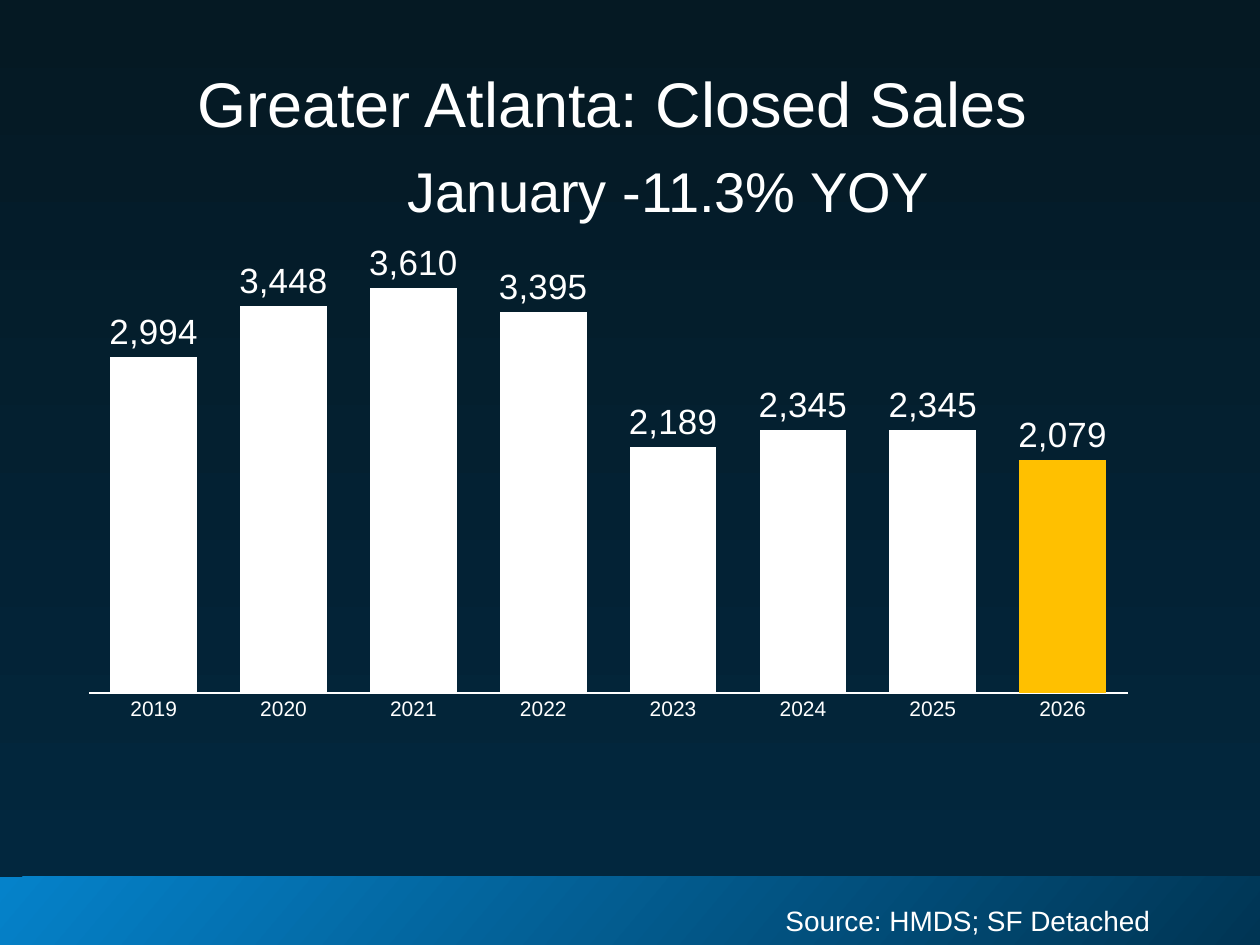
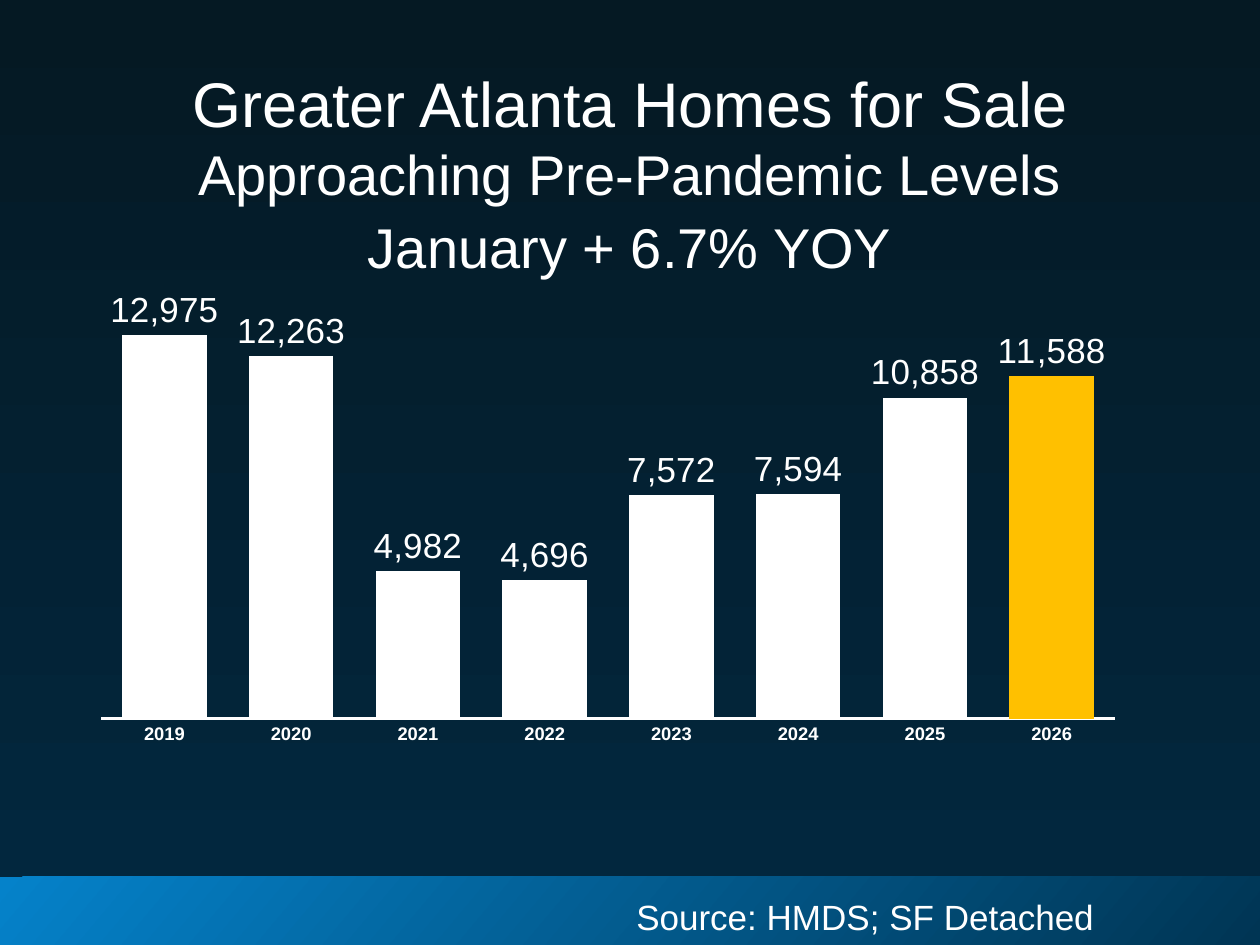
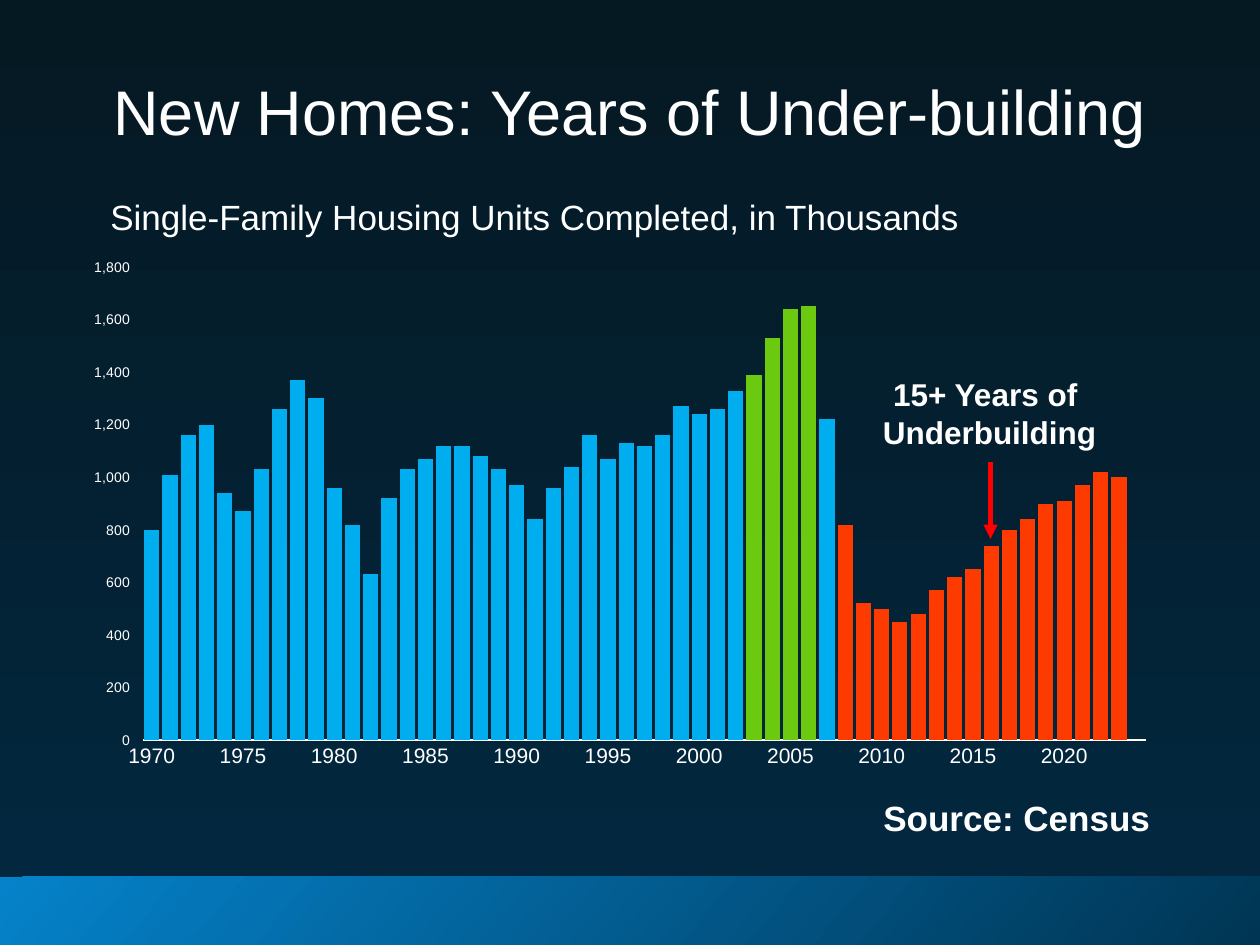
import pptx
import pptx.util
import pptx.chart.data
import pptx.dml.color
import pptx.enum.chart
import pptx.enum.shapes
import pptx.enum.text
import pptx.oxml
import pptx.oxml.ns
import lxml.etree

Pt = pptx.util.Pt
qn = pptx.oxml.ns.qn
Align = pptx.enum.text.PP_ALIGN
ChartType = pptx.enum.chart.XL_CHART_TYPE
TickMark = pptx.enum.chart.XL_TICK_MARK

FONT = "Arial"
COLORS = {
    "night": "051923",
    "navy": "022840",
    "band_start": "0582CA",
    "band_end": "003554",
    "white": "FFFFFF",
    "gold": "FFC000",
    "sky": "00AEEF",
    "green": "6BC910",
    "orange": "FD3A00",
    "red": "FF0000",
}
WIDTH, HEIGHT, BAND_TOP = 720, 540, 501
TITLE_SIZE, SUBTITLE_SIZE = 36, 32
LEADING = 0.12

RECENT_YEARS = [str(year) for year in range(2019, 2027)]
HISTORY_YEARS = [str(year) if year % 5 == 0 else "" for year in range(1970, 2025)]
CLOSED_SALES = [2994, 3448, 3610, 3395, 2189, 2345, 2345, 2079]
HOMES_FOR_SALE = [12975, 12263, 4982, 4696, 7572, 7594, 10858, 11588]
COMPLETED_UNITS = [
    800, 1010, 1160, 1200, 940, 870, 1030, 1260, 1370, 1300,
    960, 820, 630, 920, 1030, 1070, 1120, 1120, 1080, 1030,
    970, 840, 960, 1040, 1160, 1070, 1130, 1120, 1160, 1270,
    1240, 1260, 1330, 1390, 1530, 1640, 1650, 1220, 820, 520,
    500, 450, 480, 570, 620, 650, 740, 800, 840, 900,
    910, 970, 1020, 1000, None,
]
LATEST_YEAR = {7: "gold"}
BOOM_AND_SLUMP = {
    **dict.fromkeys(range(33, 37), "green"),
    **dict.fromkeys(range(38, 54), "orange"),
}

SLIDES = [
    {
        "texts": [
            (["Greater Atlanta: Closed Sales"], (0, 32.4, 700, 42.5),
             {"size": TITLE_SIZE, "leading": LEADING}),
            (["January -11.3% YOY"], (85, 85.7, 594, 24.5),
             {"size": SUBTITLE_SIZE, "leading": LEADING}),
            (["Source: HMDS; SF Detached"], (64, 512.6, 593.3, 20),
             {"size": 16, "align": Align.RIGHT, "inset": 3.6}),
        ],
        "chart": {
            "box": (37.4, 139, 607.7, 302.4), "plot": (0.022, 0, 0.978, 0.85),
            "categories": RECENT_YEARS, "values": CLOSED_SALES,
            "maximum": 4010, "base": "white", "highlights": LATEST_YEAR,
        },
    },
    {
        "texts": [
            (["Greater Atlanta Homes for Sale", ("Approaching Pre-Pandemic Levels", SUBTITLE_SIZE)],
             (63, 32.4, 594, 42.5), {"size": TITLE_SIZE, "leading": LEADING}),
            (["January + 6.7% YOY"], (63, 117.4, 594, 24.5),
             {"size": SUBTITLE_SIZE, "leading": LEADING}),
            (["Source: HMDS; SF Detached"], (32, 508.3, 593.3, 20),
             {"size": 20, "align": Align.RIGHT, "inset": 3.6}),
        ],
        "chart": {
            "box": (57, 166.3, 593.3, 287.3), "plot": (0, 0, 0.978, 0.85),
            "categories": RECENT_YEARS, "values": HOMES_FOR_SALE,
            "maximum": 14350, "base": "white", "highlights": LATEST_YEAR,
            "axis_size": 10.5, "bold": True,
        },
    },
    {
        "texts": [
            (["New Homes: Years of Under-building"], (63, 37.4, 594, 42.5),
             {"size": TITLE_SIZE, "leading": LEADING}),
            (["Source: Census"], (64, 452.2, 593.3, 15),
             {"size": 20, "align": Align.RIGHT, "inset": 2.9, "bold": True}),
            (["Single-Family Housing Units Completed, in Thousands"], (63, 109.4, 594, 34.6),
             {"size": 20, "align": Align.LEFT, "leading": LEADING}),
            (["15+ Years of ", "Underbuilding"], (486, 211.7, 159, 49),
             {"size": 18, "inset": 2.9, "bold": True}),
        ],
        "chart": {
            "box": (46, 145.4, 622.8, 300.2), "plot": (0.057, 0.024, 0.921, 0.901),
            "categories": HISTORY_YEARS, "values": COMPLETED_UNITS,
            "maximum": 1800, "base": "sky", "highlights": BOOM_AND_SLUMP,
            "stacked": True,
        },
        "arrow": (566, 264, 566, 308),
    },
]


def rgb(name):
    return pptx.dml.color.RGBColor.from_string(COLORS[name])


def points(values):
    return [Pt(value) for value in values]


def fill_solid(target, color):
    target.fill.solid()
    target.fill.fore_color.rgb = rgb(color)


def fill_gradient(fill, start, end, angle):
    fill.gradient()
    fill.gradient_angle = angle
    for stop, color in zip(fill.gradient_stops, (start, end)):
        stop.color.rgb = rgb(color)


def style_font(font, size, bold=False):
    font.name = FONT
    font.size = Pt(size)
    font.bold = bold
    font.color.rgb = rgb("white")


def add_text(slide, lines, box, size, align=Align.CENTER, bold=False, inset=0, leading=0):
    frame = slide.shapes.add_textbox(*points(box)).text_frame
    frame.word_wrap = True
    frame.margin_left = frame.margin_right = 0
    frame.margin_top = Pt(inset + leading * size)
    frame.margin_bottom = Pt(inset)
    paragraph = frame.paragraphs[0]
    paragraph.alignment = align
    for index, line in enumerate(lines):
        text, line_size = (line, size) if isinstance(line, str) else line
        if index:
            paragraph.add_line_break()
        run = paragraph.add_run()
        run.text = text
        style_font(run.font, line_size, bold)


def add_band(slide):
    band = slide.shapes.add_shape(
        pptx.enum.shapes.MSO_SHAPE.RECTANGLE, *points((0, BAND_TOP, WIDTH, HEIGHT - BAND_TOP)))
    band.shadow.inherit = False
    band.line.fill.background()
    fill_gradient(band.fill, "band_start", "band_end", 320)


def place_plot(chart, plot):
    area = chart._chartSpace.find(".//" + qn("c:plotArea"))
    for layout in area.findall(qn("c:layout")):
        area.remove(layout)
    layout = lxml.etree.Element(qn("c:layout"))
    manual = lxml.etree.SubElement(layout, qn("c:manualLayout"))
    settings = [("layoutTarget", "inner"), ("xMode", "edge"), ("yMode", "edge")]
    for tag, value in settings + list(zip("xywh", plot)):
        lxml.etree.SubElement(manual, qn("c:" + tag)).set("val", str(value))
    area.insert(0, layout)


def style_axes(chart, maximum, axis_size, bold, show_values):
    years = chart.category_axis
    years.major_tick_mark = years.minor_tick_mark = TickMark.NONE
    years.has_major_gridlines = False
    years.format.line.color.rgb = rgb("white")
    years.format.line.width = Pt(1.5)
    style_font(years.tick_labels.font, axis_size, bold)
    years._element.find(".//" + qn("a:bodyPr")).set("rot", "-60000000")

    scale = chart.value_axis
    scale.has_major_gridlines = False
    scale.minimum_scale, scale.maximum_scale = 0, maximum
    scale.visible = show_values
    if show_values:
        scale.major_unit = 200
        scale.major_tick_mark = TickMark.OUTSIDE
        scale.format.line.fill.background()
        scale.tick_labels.number_format = "#,##0"
        scale.tick_labels.number_format_is_linked = False
        style_font(scale.tick_labels.font, 8)


def add_bars(slide, box, plot, categories, values, maximum, base, highlights,
             axis_size=12, bold=False, stacked=False):
    data = pptx.chart.data.CategoryChartData(number_format="#,##0")
    data.categories = categories
    data.add_series("Series 1", values)
    kind = ChartType.COLUMN_STACKED if stacked else ChartType.COLUMN_CLUSTERED
    chart = slide.shapes.add_chart(kind, *points(box), data).chart
    chart.has_legend = chart.has_title = False
    style_font(chart.font, 10)
    place_plot(chart, plot)
    style_axes(chart, maximum, axis_size, bold, stacked)

    bars = chart.plots[0]
    bars.vary_by_categories = False
    bars.gap_width, bars.overlap = (20, 100) if stacked else (50, -27)
    series = bars.series[0]
    series.invert_if_negative = False
    fill_solid(series.format, base)
    for index, color in highlights.items():
        fill_solid(series.points[index].format, color)
    if not stacked:
        labels = series.data_labels
        labels.show_value = True
        labels.number_format = "#,##0"
        labels.number_format_is_linked = False
        labels.position = pptx.enum.chart.XL_LABEL_POSITION.OUTSIDE_END
        style_font(labels.font, 20)


def add_arrow(slide, ends):
    arrow = slide.shapes.add_connector(
        pptx.enum.shapes.MSO_CONNECTOR.STRAIGHT, *points(ends))
    arrow.line.color.rgb = rgb("red")
    arrow.line.width = Pt(2.75)
    lxml.etree.SubElement(arrow.line._get_or_add_ln(), qn("a:tailEnd")).set("type", "triangle")
    lxml.etree.SubElement(arrow._element.spPr, qn("a:effectLst"))


def main():
    presentation = pptx.Presentation()
    presentation.slide_width, presentation.slide_height = Pt(WIDTH), Pt(HEIGHT)
    fill_gradient(presentation.slide_master.background.fill, "night", "navy", 270)
    for content in SLIDES:
        slide = presentation.slides.add_slide(presentation.slide_layouts[6])
        add_band(slide)
        add_bars(slide, **content["chart"])
        for lines, box, style in content["texts"]:
            add_text(slide, lines, box, **style)
        if "arrow" in content:
            add_arrow(slide, content["arrow"])
    presentation.save("out.pptx")


if __name__ == "__main__":
    main()
